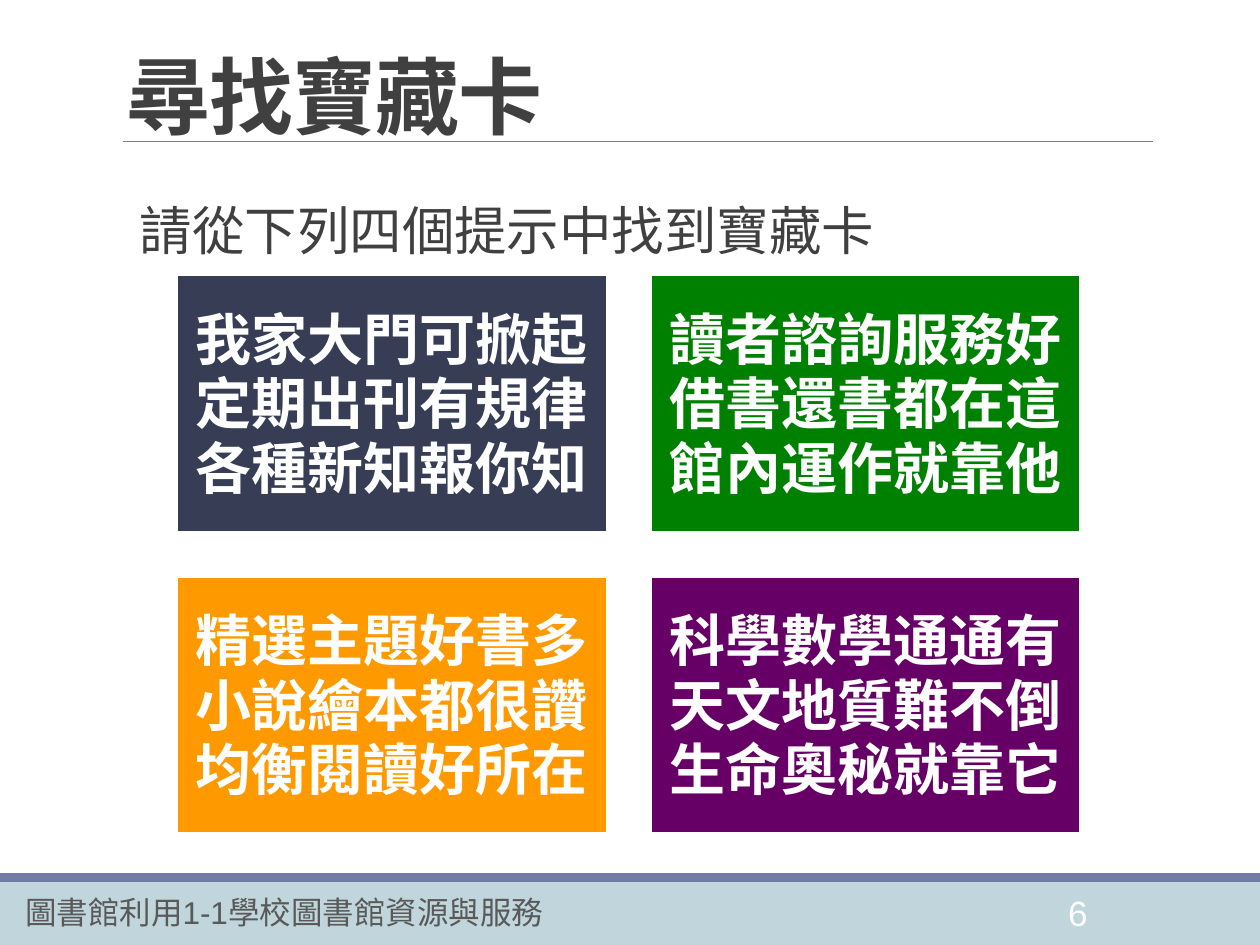
from pptx import Presentation
from pptx.dml.color import RGBColor
from pptx.enum.shapes import MSO_CONNECTOR, MSO_SHAPE
from pptx.enum.text import MSO_ANCHOR, MSO_AUTO_SIZE, PP_ALIGN
from pptx.oxml.ns import qn
from pptx.util import Inches, Pt
from lxml.etree import SubElement

WHITE = RGBColor(0xFF, 0xFF, 0xFF)
INK = RGBColor(0x40, 0x40, 0x40)
GREY = RGBColor(0x59, 0x59, 0x59)
RULE = RGBColor(0x80, 0x80, 0x80)
PALE = RGBColor(0xC0, 0xD6, 0xDC)
BLUE = RGBColor(0x72, 0x7C, 0xA3)
NAVY = RGBColor(0x37, 0x3D, 0x54)
GREEN = RGBColor(0x00, 0x80, 0x00)
ORANGE = RGBColor(0xFF, 0x99, 0x00)
PURPLE = RGBColor(0x66, 0x00, 0x66)
SANS = "Arial"
CJK = "Noto Sans CJK SC"

CARDS = [
    (NAVY, SANS, "我家大門可掀起\n定期出刊有規律\n各種新知報你知"),
    (GREEN, SANS, "讀者諮詢服務好\n借書還書都在這\n館內運作就靠他"),
    (ORANGE, CJK, "精選主題好書多\n小說繪本都很讚\n均衡閱讀好所在"),
    (PURPLE, CJK, "科學數學通通有\n天文地質難不倒\n生命奧秘就靠它"),
]


def style(para, size, color, face, bold=False):
    for run in para.runs:
        font = run.font
        font.size, font.bold, font.name = Pt(size), bold, face
        font.color.rgb = color
        SubElement(font._element, qn("a:ea"), typeface=CJK)


def place(shape, box):
    left, top, width, height = map(Inches, box)
    shape.left, shape.top = left, top
    shape.width, shape.height = width, height


def add_block(slide, box, color):
    block = slide.shapes.add_shape(MSO_SHAPE.RECTANGLE, *map(Inches, box))
    block.shadow.inherit = False
    block.fill.solid()
    block.fill.fore_color.rgb = color
    block.line.fill.background()
    return block


def add_label(slide, box, text, size, color, face):
    label = slide.shapes.add_textbox(*map(Inches, box))
    frame = label.text_frame
    frame.word_wrap = True
    frame.text = text
    style(frame.paragraphs[0], size, color, face)
    return frame


def add_footer(slide, box):
    left, top, width, height = box
    add_block(slide, box, PALE)
    add_block(slide, (left, top - 0.07, width, 0.07), BLUE)
    add_label(slide, (left + 8.38, top + 0.03, 0.7, 0.4), "6", 20, WHITE, SANS)
    add_label(slide, (left + 0.1, top + 0.04, 4.65, 0.4),
              "圖書館利用1-1學校圖書館資源與服務", 18, GREY, SANS)


def add_title(slide, box):
    title = slide.shapes.title
    place(title, box)
    frame = title.text_frame
    frame.text = "尋找寶藏卡"
    frame.auto_size = MSO_AUTO_SIZE.NONE
    frame.vertical_anchor = MSO_ANCHOR.BOTTOM
    para = frame.paragraphs[0]
    para.alignment = PP_ALIGN.LEFT
    para.line_spacing = 0.85
    style(para, 48, INK, CJK, True)
    para.runs[0].font._element.set("spc", "-50")
    rule = slide.shapes.add_connector(
        MSO_CONNECTOR.STRAIGHT, *map(Inches, (0.98, 1.12, 9.15, 1.12)))
    rule.line.color.rgb = RULE
    rule.line.width = Pt(0.5)
    SubElement(rule._element.spPr, qn("a:effectLst"))


def add_intro(slide, box):
    frame = add_label(slide, box, "請從下列四個提示中找到寶藏卡", 30, INK, CJK)
    frame.margin_left = frame.margin_right = 0
    para = frame.paragraphs[0]
    para.space_after = Pt(6)
    props = para._p.get_or_add_pPr()
    props.set("marL", str(Inches(0.1)))
    props.set("indent", str(-Inches(0.1)))
    tint = SubElement(props, qn("a:buClr"))
    SubElement(tint, qn("a:srgbClr"), val=str(BLUE))
    SubElement(props, qn("a:buChar"), char=" ")


def add_card(slide, box, color, face, text):
    card = add_block(slide, box, color)
    card.line.color.rgb = WHITE
    card.line.width = Pt(2)
    frame = card.text_frame
    frame.word_wrap = True
    frame.vertical_anchor = MSO_ANCHOR.MIDDLE
    frame.margin_left = frame.margin_right = Inches(0.13)
    frame.margin_top = frame.margin_bottom = Inches(0.13)
    para = frame.paragraphs[0]
    para.text = text
    para.alignment = PP_ALIGN.CENTER
    para.line_spacing = Pt(37)
    style(para, 32, WHITE, face, True)


def add_cards(slide, box):
    left, top, width, height = box
    wide, high = 3.42, 2.05
    for i, card in enumerate(CARDS):
        row, col = divmod(i, 2)
        spot = (left + col * (width - wide), top + row * (height - high), wide, high)
        add_card(slide, spot, *card)


def main():
    deck = Presentation()
    deck.slide_width, deck.slide_height = Inches(10), Inches(7.5)
    slide = deck.slides.add_slide(deck.slide_layouts[5])
    add_footer(slide, (0, 7, 10, 0.5))
    add_intro(slide, (0.9, 1.52, 8.25, 4.9))
    add_title(slide, (0.9, 0.4, 8.25, 0.81))
    add_cards(slide, (1.4, 2.18, 7.18, 4.44))
    deck.save("out.pptx")


if __name__ == "__main__":
    main()
